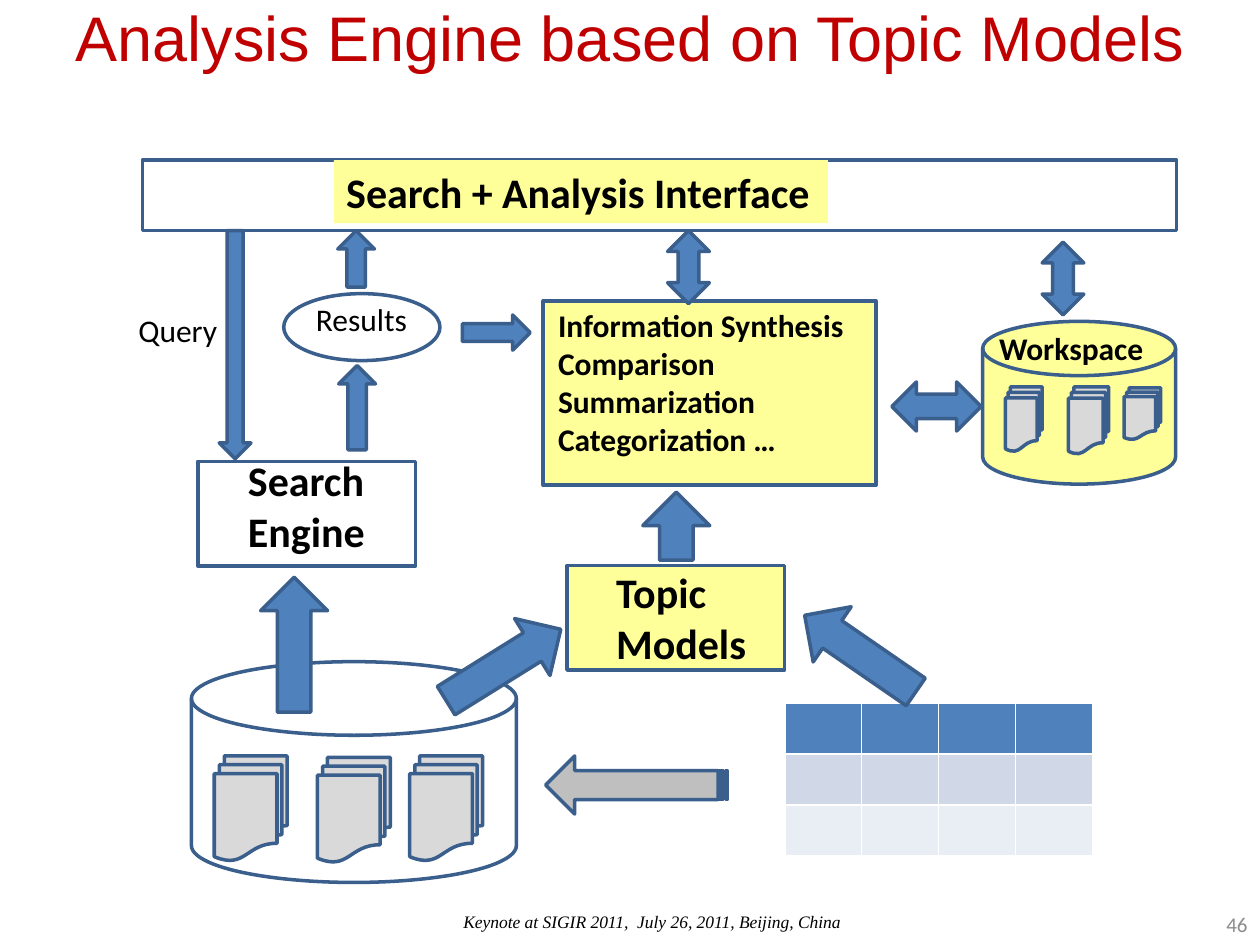
from pptx import Presentation
from pptx.dml.color import RGBColor
from pptx.enum import shapes, text
from pptx.util import Cm, Pt

BLUE = RGBColor(0x4F, 0x81, 0xBD)
OUTLINE = RGBColor(0x3A, 0x5F, 0x8C)
YELLOW = RGBColor(0xFF, 0xFF, 0x99)
PAPER = RGBColor(0xD9, 0xD9, 0xD9)
SILVER = RGBColor(0xBF, 0xBF, 0xBF)
RED = RGBColor(0xC0, 0x00, 0x00)
BLACK = RGBColor(0x00, 0x00, 0x00)
GRAY = RGBColor(0x8C, 0x8C, 0x8C)
ROW_FILLS = [BLUE, RGBColor(0xD0, 0xD8, 0xE8), RGBColor(0xE9, 0xED, 0xF4)]

KIND = shapes.MSO_SHAPE
DISK = KIND.FLOWCHART_MAGNETIC_DISK
DOCS = KIND.FLOWCHART_MULTIDOCUMENT
LEFT, CENTER, RIGHT = text.PP_ALIGN.LEFT, text.PP_ALIGN.CENTER, text.PP_ALIGN.RIGHT

# Content; every box is left, top, width, height in cm
TITLE = "Analysis Engine based on Topic Models"
TITLE_BOX = (0, -0.64, 25.4, 2.74)
TABLE_BOX = (15.82, 14.17, 6.2, 3.05)
TABLE_COLS = 4
BIG_ARROW = (2.72, 1.35)
NODE = (4.39, 2.11)
STORED_DOCS = (1.47, 2.11)

# kind, box, fill, rotation; back to front
DIAGRAM = [
    # Document store and search engine
    (DISK, (3.86, 13.34, 6.55, 4.45), None, 0),
    (DOCS, (4.32, 15.24, *STORED_DOCS), PAPER, 0),
    (DOCS, (6.4, 15.27, *STORED_DOCS), PAPER, 0),
    (DOCS, (8.26, 15.24, *STORED_DOCS), PAPER, 0),
    (KIND.RECTANGLE, (3.99, 9.3, *NODE), None, 0),
    (KIND.RIGHT_ARROW, (4.57, 12.32, *BIG_ARROW), BLUE, 270),
    (KIND.OVAL, (5.72, 5.92, 3.15, 1.35), None, 0),
    (KIND.DOWN_ARROW, (4.42, 4.65, 0.64, 4.6), BLUE, 0),
    (KIND.UP_ARROW, (6.83, 7.37, 0.74, 1.7), BLUE, 0),
    (KIND.UP_ARROW, (6.81, 4.65, 0.74, 1.14), BLUE, 0),
    # Topic models
    (KIND.RECTANGLE, (11.43, 11.4, *NODE), YELLOW, 0),
    (KIND.RIGHT_ARROW, (12.95, 9.93, 1.37, 1.35), BLUE, 270),
    (KIND.RIGHT_ARROW, (8.79, 12.73, *BIG_ARROW), BLUE, 328.1),
    (KIND.RIGHT_ARROW, (15.98, 12.5, *BIG_ARROW), BLUE, 214.6),
    # Workspace
    (DISK, (19.81, 6.48, 3.89, 3.28), YELLOW, 0),
    (DOCS, (20.27, 7.8, 0.74, 1.3), PAPER, 0),
    (DOCS, (21.54, 7.8, 0.81, 1.35), PAPER, 0),
    (DOCS, (22.66, 7.82, 0.74, 1.04), PAPER, 0),
    # Synthesis and its links
    (KIND.RECTANGLE, (10.95, 6.07, 6.71, 3.71), YELLOW, 0),
    (KIND.RIGHT_ARROW, (9.32, 6.35, 1.37, 0.71), BLUE, 0),
    (KIND.LEFT_RIGHT_ARROW, (17.98, 7.7, 1.8, 0.99), BLUE, 0),
    (KIND.UP_DOWN_ARROW, (13.46, 4.65, 0.84, 1.47), BLUE, 0),
    (KIND.UP_DOWN_ARROW, (21.01, 4.88, 0.84, 1.47), BLUE, 0),
    # Interface bar and the feed from the table
    (KIND.RECTANGLE, (2.87, 3.23, 20.85, 1.42), None, 0),
    (KIND.STRIPED_RIGHT_ARROW, (11, 15.24, 3.66, 1.17), SILVER, 180),
]

# lines, box, size, bold
LABELS = [
    (["Query"], (2.54, 6.15, 2.11, 1.02), 18, False),
    (["Results"], (6.12, 5.92, 2.36, 1.02), 18, False),
    (["Search", "Engine"], (4.75, 9.04, 3.07, 2.31), 24, True),
    (["Topic", "Models"], (12.17, 11.3, 3.18, 2.31), 24, True),
    (["Workspace"], (19.89, 6.5, 3.45, 1.02), 18, True),
    (["Information Synthesis", "Comparison", "Summarization", "Categorization …"],
     (11, 6.05, 6.32, 3.33), 18, True),
]
INTERFACE = (["Search + Analysis Interface"], (6.73, 3.23, 9.96, 1.27), 24, True)
FOOTER = (["Keynote at SIGIR 2011,  July 26, 2011, Beijing, China"],
          (9.09, 18.24, 10.36, 1.02), 10, False)
PAGE = (["46"], (19.48, 18.11, 5.92, 1.02), 12, False)


def cms(box):
    return [Cm(v) for v in box]


def write(tf, lines, size, bold=False, font="Calibri", color=BLACK, align=LEFT, italic=False):
    tf.text = "\n".join(lines)
    for p in tf.paragraphs:
        p.alignment = align
        for r in p.runs:
            f = r.font
            f.name, f.size, f.bold, f.italic = font, Pt(size), bold, italic
            f.color.rgb = color


def add_label(s, label, wrap=False, **style):
    lines, box, size, bold = label
    sp = s.shapes.add_textbox(*cms(box))
    sp.text_frame.word_wrap = wrap
    write(sp.text_frame, lines, size, bold, **style)
    return sp


def add_node(s, kind, box, fill, rotation):
    sp = s.shapes.add_shape(kind, *cms(box))
    sp.shadow.inherit = False
    sp.rotation = rotation
    if fill is None:
        sp.fill.background()
    else:
        sp.fill.solid()
        sp.fill.fore_color.rgb = fill
    sp.line.color.rgb = OUTLINE
    sp.line.width = Pt(2)


def add_grid(s):
    table = s.shapes.add_table(len(ROW_FILLS), TABLE_COLS, *cms(TABLE_BOX)).table
    for row, color in zip(table.rows, ROW_FILLS):
        for cell in row.cells:
            cell.fill.solid()
            cell.fill.fore_color.rgb = color


def main():
    prs = Presentation()
    prs.slide_width, prs.slide_height = Cm(25.4), Cm(19.05)
    s = prs.slides.add_slide(prs.slide_layouts[5])

    # Title
    title = s.shapes.title
    title.left, title.top, title.width, title.height = cms(TITLE_BOX)
    title.text_frame.vertical_anchor = text.MSO_ANCHOR.MIDDLE
    write(title.text_frame, [TITLE], 36, font="Arial", color=RED, align=CENTER)

    # Diagram
    add_grid(s)
    for node in DIAGRAM:
        add_node(s, *node)
    for label in LABELS:
        add_label(s, label)
    banner = add_label(s, INTERFACE)
    banner.fill.solid()
    banner.fill.fore_color.rgb = YELLOW

    # Footer and page number
    add_label(s, FOOTER, wrap=True, font="Times New Roman", italic=True)
    page = add_label(s, PAGE, wrap=True, color=GRAY, align=RIGHT)
    page.text_frame.vertical_anchor = text.MSO_ANCHOR.MIDDLE

    prs.save("out.pptx")


if __name__ == "__main__":
    main()
